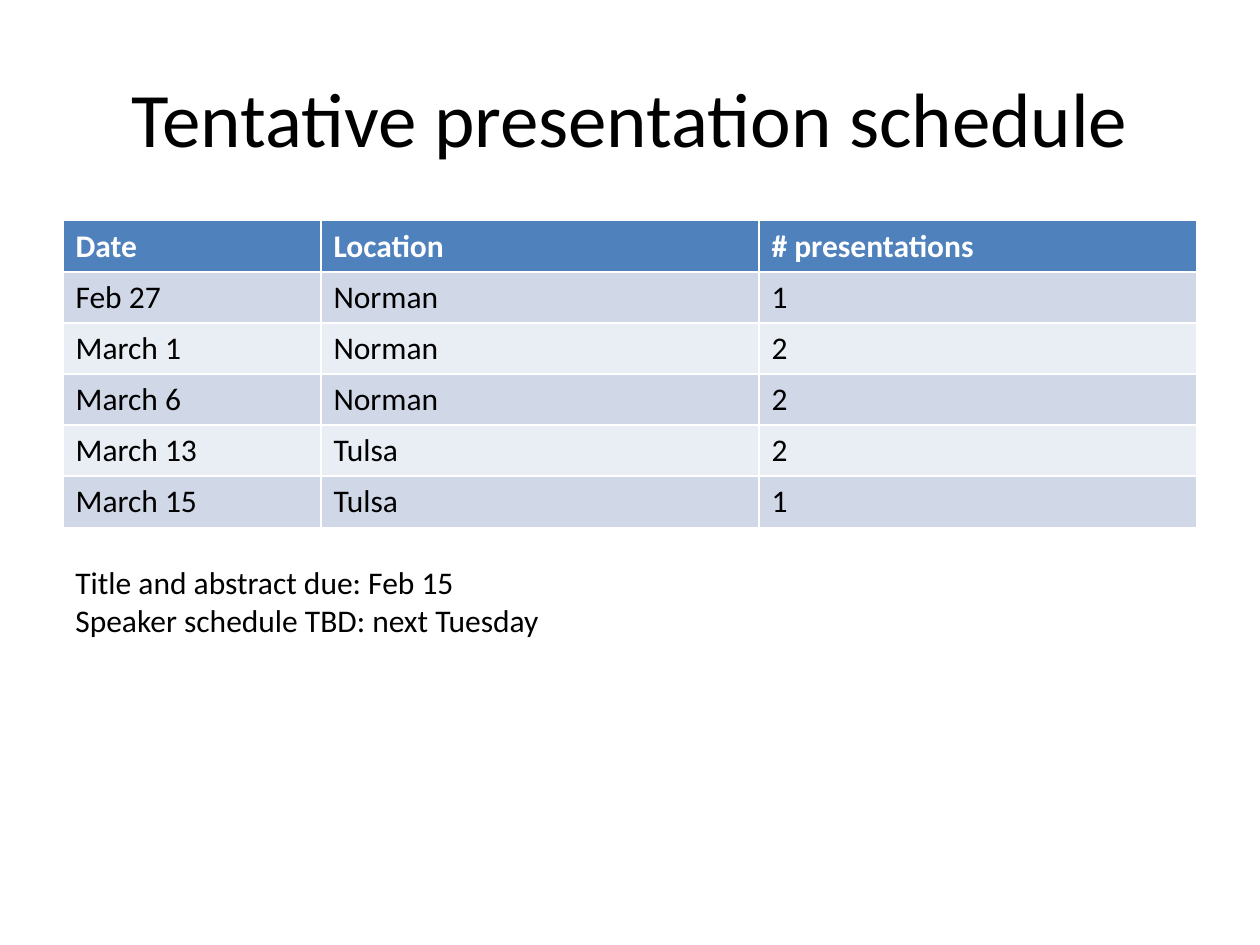
from pptx import Presentation, util as u
from pptx.dml.color import RGBColor
from pptx.enum import text

FONT = "Calibri"
BLACK, WHITE = "000000", "FFFFFF"
HEADER_FILL = "4F81BD"
BAND_FILLS = ("D0D8E8", "E9EDF4")
COLUMN_WIDTHS = (5.2, 8.83, 8.83)
ROW_HEIGHT = 1.03
SCHEDULE = [
    ("Date", "Location", "# presentations"),
    ("Feb 27", "Norman", "1"),
    ("March 1", "Norman", "2"),
    ("March 6", "Norman", "2"),
    ("March 13", "Tulsa", "2"),
    ("March 15", "Tulsa", "1"),
]
NOTES = ("Title and abstract due: Feb 15", "Speaker schedule TBD: next Tuesday")


def color(value):
    return RGBColor.from_string(value)


def format_text(text_frame, size, font_color=BLACK, bold=False):
    for paragraph in text_frame.paragraphs:
        for run in paragraph.runs:
            run.font.name = FONT
            run.font.size = u.Pt(size)
            run.font.bold = bold
            run.font.color.rgb = color(font_color)


def place_title(slide, left, top, width, height):
    title = slide.shapes.title
    title.left, title.top = u.Cm(left), u.Cm(top)
    title.width, title.height = u.Cm(width), u.Cm(height)
    title.text_frame.text = "Tentative presentation schedule"
    title.text_frame.vertical_anchor = text.MSO_ANCHOR.MIDDLE
    title.text_frame.paragraphs[0].alignment = text.PP_ALIGN.CENTER
    format_text(title.text_frame, 44)


def add_schedule(slide, left, top):
    table = slide.shapes.add_table(
        len(SCHEDULE), len(COLUMN_WIDTHS), u.Cm(left), u.Cm(top),
        u.Cm(sum(COLUMN_WIDTHS)), u.Cm(ROW_HEIGHT * len(SCHEDULE))).table
    for column, width in zip(table.columns, COLUMN_WIDTHS):
        column.width = u.Cm(width)

    # The table style draws the white rules; fills alternate below the header
    for row_index, values in enumerate(SCHEDULE):
        is_header = row_index == 0
        fill = HEADER_FILL if is_header else BAND_FILLS[(row_index - 1) % 2]
        for cell, value in zip(table.rows[row_index].cells, values):
            cell.text_frame.text = value
            cell.fill.solid()
            cell.fill.fore_color.rgb = color(fill)
            format_text(cell.text_frame, 18, WHITE if is_header else BLACK, is_header)


def add_notes(slide, left, top, width, height):
    box = slide.shapes.add_textbox(u.Cm(left), u.Cm(top), u.Cm(width), u.Cm(height))
    box.text_frame.word_wrap = True
    box.text_frame.auto_size = text.MSO_AUTO_SIZE.SHAPE_TO_FIT_TEXT
    box.text_frame.text = "\n".join(NOTES)
    format_text(box.text_frame, 18)


def main():
    presentation = Presentation()
    presentation.slide_width, presentation.slide_height = u.Cm(25.4), u.Cm(19.05)
    slide = presentation.slides.add_slide(presentation.slide_layouts[5])  # title only

    margin = 1.27
    place_title(slide, margin, 0.76, 22.86, 3.18)
    add_schedule(slide, margin, 4.45)
    add_notes(slide, margin, 11.23, 14.4, 1.8)

    presentation.save("out.pptx")


if __name__ == "__main__":
    main()
